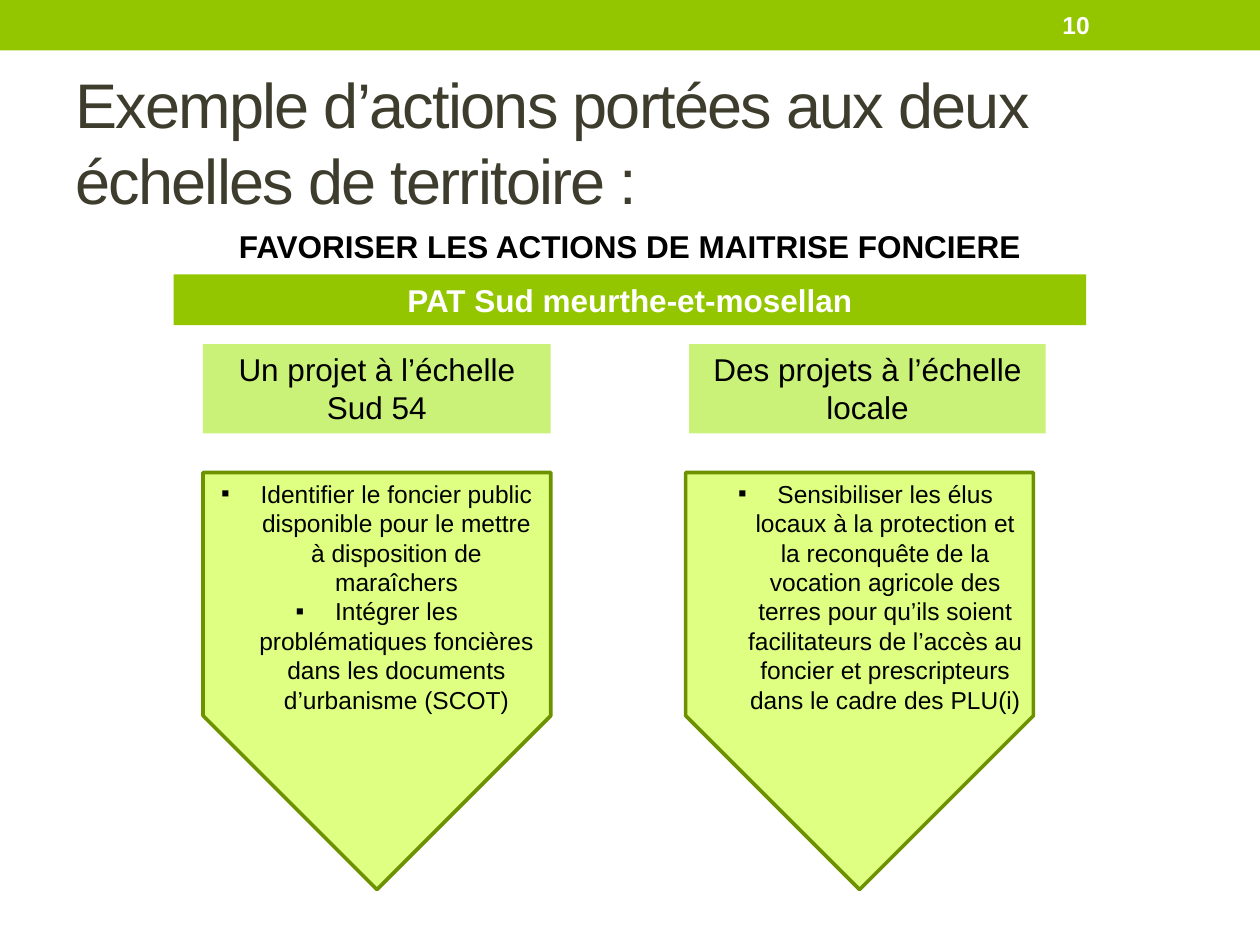
from dataclasses import dataclass

from lxml.etree import SubElement
from pptx import Presentation
from pptx.dml.color import RGBColor
from pptx.enum.shapes import MSO_SHAPE as Preset
from pptx.enum.text import MSO_ANCHOR as Anchor, PP_ALIGN as Align
from pptx.oxml.ns import qn
from pptx.util import Pt

FONT = "Arial"
GREEN, LIGHT_GREEN, LIME, OLIVE = "94C600", "CAF278", "DFFF82", "6D9200"
BLACK, WHITE, TITLE_COLOR = "000000", "FFFFFF", "3E3D2D"
COLUMN_WIDTH = 198.72
ARROW_TOP, ARROW_LENGTH = 270, 238.32
BULLET_INDENT = 22.5


@dataclass
class Area:
    left: float
    top: float
    width: float
    height: float

    def lengths(self) -> list:
        return [Pt(value) for value in (self.left, self.top, self.width, self.height)]


@dataclass
class Style:
    size: float
    color: str = BLACK
    bold: bool = False
    align: Align = Align.CENTER
    anchor: Anchor = Anchor.TOP
    spacing: float = 0


@dataclass
class Column:
    heading: str
    heading_area: Area
    arrow_left: float
    text_left: float
    actions: list[str]


def rgb(color: str) -> RGBColor:
    return RGBColor.from_string(color)


def write(box, lines: list[str], style: Style) -> None:
    frame = box.text_frame
    frame.word_wrap = True
    frame.vertical_anchor = style.anchor
    frame.text = "\n".join(lines)
    for para in frame.paragraphs:
        para.alignment = style.align
        for span in para.runs:
            span.font.name = FONT
            span.font.size = Pt(style.size)
            span.font.bold = style.bold
            span.font.color.rgb = rgb(style.color)
            if style.spacing:
                span.font._element.set("spc", str(round(style.spacing * 100)))


def add_text(page, area: Area, lines: list[str], style: Style):
    box = page.shapes.add_textbox(*area.lengths())
    write(box, lines, style)
    return box


def add_block(page, preset: Preset, area: Area, fill: str):
    shape = page.shapes.add_shape(preset, *area.lengths())
    shape.shadow.inherit = False
    shape.fill.solid()
    shape.fill.fore_color.rgb = rgb(fill)
    shape.line.fill.background()
    return shape


def add_arrow(page, left: float) -> None:
    """Draw a pentagon that points down, its flat side at ARROW_TOP."""
    shift = (ARROW_LENGTH - COLUMN_WIDTH) / 2
    area = Area(left - shift, ARROW_TOP + shift, ARROW_LENGTH, COLUMN_WIDTH)
    arrow = add_block(page, Preset.PENTAGON, area, LIME)
    arrow.rotation = 90
    arrow.line.color.rgb = rgb(OLIVE)
    arrow.line.width = Pt(2.08)


def add_bullets(box) -> None:
    for para in box.text_frame.paragraphs:
        properties = para._p.get_or_add_pPr()
        properties.set("marL", str(Pt(BULLET_INDENT)))
        properties.set("indent", str(-Pt(BULLET_INDENT)))
        SubElement(properties, qn("a:buFont"), typeface=FONT)
        SubElement(properties, qn("a:buChar"), char="▪")


def add_column(page, column: Column) -> None:
    heading = add_block(page, Preset.RECTANGLE, column.heading_area, LIGHT_GREEN)
    write(heading, [column.heading], Style(18))
    add_arrow(page, column.arrow_left)
    area = Area(column.text_left, ARROW_TOP, COLUMN_WIDTH, 143.3)
    add_bullets(add_text(page, area, column.actions, Style(14)))


COLUMNS = [
    Column(
        "Un projet à l’échelle Sud 54",
        Area(116, 196.6, COLUMN_WIDTH, 51),
        116,
        116,
        [
            "Identifier le foncier public disponible pour le mettre à disposition de maraîchers",
            "Intégrer les problématiques foncières dans les documents d’urbanisme (SCOT)",
        ],
    ),
    Column(
        "Des projets à l’échelle locale",
        Area(393.8, 196.6, 203.8, 51),
        391.8,
        395.3,
        [
            "Sensibiliser les élus locaux à la protection et la reconquête de la vocation "
            "agricole des terres pour qu’ils soient facilitateurs de l’accès au foncier "
            "et prescripteurs dans le cadre des PLU(i)",
        ],
    ),
]


def main() -> None:
    deck = Presentation()
    deck.slide_width, deck.slide_height = Pt(720), Pt(540)
    page = deck.slides.add_slide(deck.slide_layouts[6])

    # Top band with the page number
    add_block(page, Preset.RECTANGLE, Area(0, 0, 720, 28.8), GREEN)
    add_text(page, Area(600, 1.4, 84, 26), ["10"],
             Style(14, WHITE, bold=True, align=Align.LEFT, anchor=Anchor.MIDDLE))

    # Title and theme
    add_text(page, Area(36, 41.8, 648, 77.8),
             ["Exemple d’actions portées aux deux échelles de territoire :"],
             Style(36, TITLE_COLOR, align=Align.LEFT, anchor=Anchor.MIDDLE, spacing=-1))
    theme = add_text(page, Area(36, 126, 648, 383.8),
                     ["FAVORISER LES ACTIONS DE MAITRISE FONCIERE"], Style(18, bold=True))
    theme.text_frame.paragraphs[0].space_before = Pt(3.6)

    # Territory banner
    banner = add_block(page, Preset.RECTANGLE, Area(99.3, 156.8, 521.4, 29), GREEN)
    write(banner, ["PAT Sud meurthe-et-mosellan"], Style(18, WHITE, bold=True))

    # One column for each scale
    for column in COLUMNS:
        add_column(page, column)

    deck.save("out.pptx")


if __name__ == "__main__":
    main()
